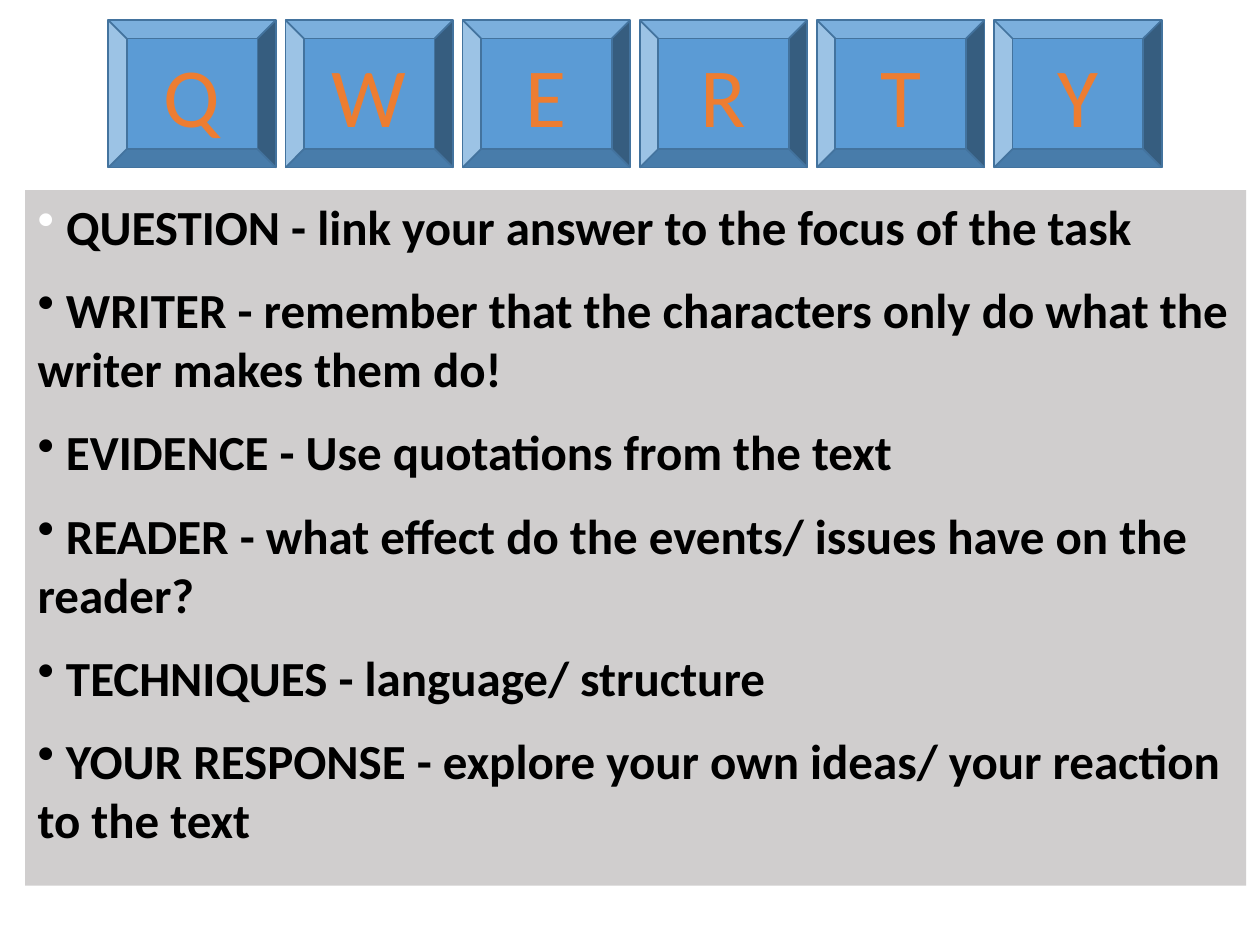
import pptx
import pptx.util
import pptx.dml.color
import pptx.enum.shapes
import pptx.enum.text
import pptx.oxml.ns
import lxml.etree

Inches, Pt = pptx.util.Inches, pptx.util.Pt
qn = pptx.oxml.ns.qn


def color(value):
    return pptx.dml.color.RGBColor.from_string(value)


def style_run(run, size, value, bold):
    run.font.name = "Calibri"
    run.font.size = Pt(size)
    run.font.bold = bold
    run.font.color.rgb = color(value)


presentation = pptx.Presentation()
presentation.slide_width = Inches(10)
presentation.slide_height = Inches(7.5)
slide = presentation.slides.add_slide(presentation.slide_layouts[6])

for index, letter in enumerate("QWERTY"):
    key = slide.shapes.add_shape(
        pptx.enum.shapes.MSO_SHAPE.BEVEL,
        Inches(0.86 + 1.406 * index), Inches(0.16), Inches(1.33), Inches(1.17))
    key.shadow.inherit = False
    key.fill.solid()
    key.fill.fore_color.rgb = color("5B9BD5")
    key.line.color.rgb = color("43739E")
    key.line.width = Pt(1)
    key.text_frame.text = letter
    key.text_frame.vertical_anchor = pptx.enum.text.MSO_ANCHOR.MIDDLE
    key_label = key.text_frame.paragraphs[0]
    key_label.alignment = pptx.enum.text.PP_ALIGN.CENTER
    style_run(key_label.runs[0], 48, "ED7D31", False)

guidance = [
    "QUESTION - link your answer to the focus of the task",
    "WRITER - remember that the characters only do what the writer makes them do!",
    "EVIDENCE - Use quotations from the text",
    "READER - what effect do the events/ issues have on the reader?",
    "TECHNIQUES - language/ structure",
    "YOUR RESPONSE - explore your own ideas/ your reaction to the text",
]

panel = slide.shapes.add_shape(
    pptx.enum.shapes.MSO_SHAPE.RECTANGLE,
    Inches(0.2), Inches(1.51), Inches(9.69), Inches(5.52))
panel.shadow.inherit = False
panel.line.fill.background()
panel.fill.solid()
panel.fill.fore_color.rgb = color("AFABAB")
panel_color = panel.fill._xPr.find(qn("a:solidFill")).find(qn("a:srgbClr"))
lxml.etree.SubElement(panel_color, qn("a:alpha"), val="58000")

advice = panel.text_frame
advice.word_wrap = True
advice.vertical_anchor = pptx.enum.text.MSO_ANCHOR.TOP

for index, point in enumerate(guidance):
    paragraph = advice.add_paragraph() if index else advice.paragraphs[0]
    paragraph.alignment = pptx.enum.text.PP_ALIGN.LEFT
    paragraph.space_before = Pt(14 if index else 0)
    bullet_parent = paragraph._p.get_or_add_pPr()
    lxml.etree.SubElement(bullet_parent, qn("a:buChar"), char="•")
    pieces = [(" " + point, "000000")] if index else [(" ", "FFFFFF"), (point, "000000")]
    for words, shade in pieces:
        run = paragraph.add_run()
        run.text = words
        style_run(run, 28, shade, True)

presentation.save("out.pptx")
